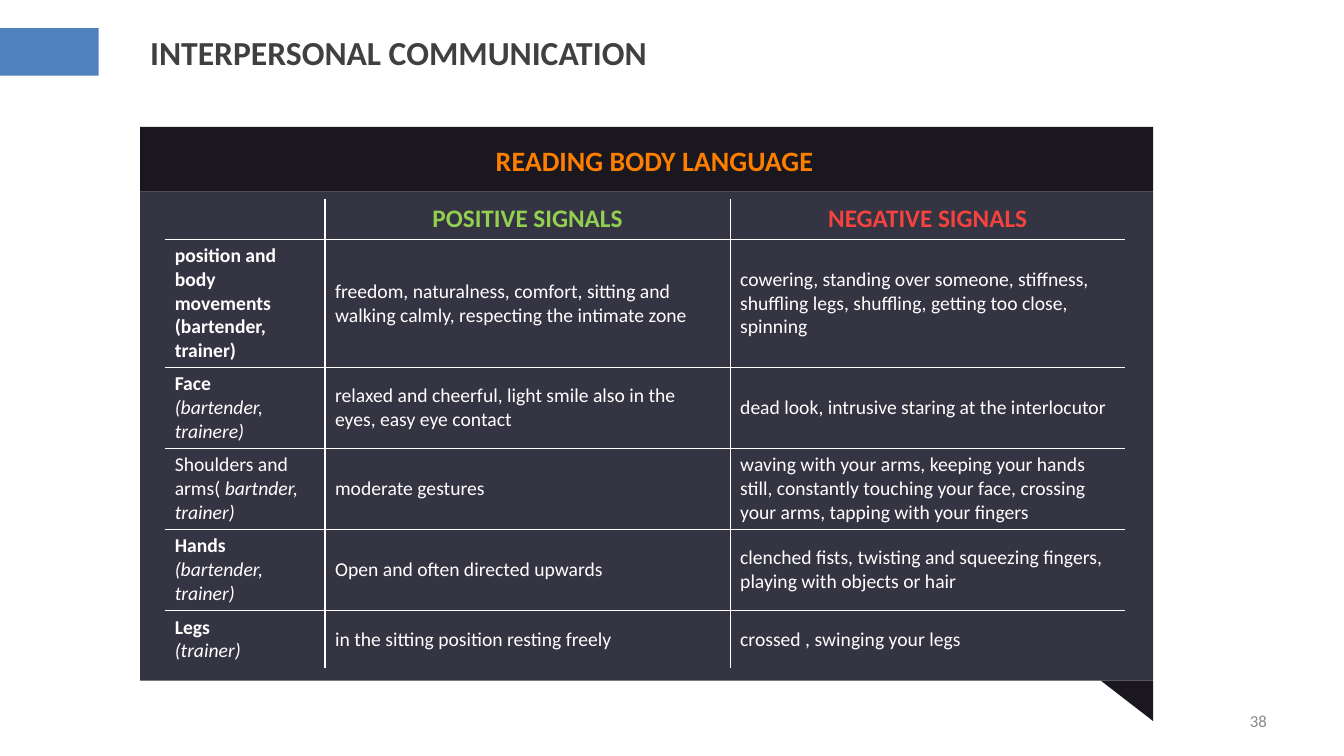
import pptx
import pptx.util
import pptx.dml.color
import pptx.enum.shapes
import pptx.enum.text
import pptx.oxml
import pptx.oxml.ns

Cm = pptx.util.Cm
Pt = pptx.util.Pt
RGBColor = pptx.dml.color.RGBColor
SHAPE = pptx.enum.shapes.MSO_SHAPE
ALIGN = pptx.enum.text.PP_ALIGN
MIDDLE = pptx.enum.text.MSO_ANCHOR.MIDDLE

BLUE = RGBColor(0x4F, 0x81, 0xBD)
SLATE = RGBColor(0x35, 0x34, 0x43)
NIGHT = RGBColor(0x1A, 0x17, 0x1F)
ORANGE = RGBColor(0xFD, 0x7E, 0x01)
GREEN = RGBColor(0x92, 0xD0, 0x50)
RED = RGBColor(0xF4, 0x43, 0x3E)
WHITE = RGBColor(0xFF, 0xFF, 0xFF)
DARK_GREY = RGBColor(0x40, 0x40, 0x40)
GREY = RGBColor(0x89, 0x89, 0x89)

COLUMN_WIDTHS = (4.04, 10.21, 9.96)
ROW_HEIGHTS = (1.02, 3.23, 2.04, 2.04, 2.04, 1.46)

# Each label is a list of paragraphs, each paragraph a list of (text, style).
SIGNALS = [
    ([[("position and body movements", "bold")], [("(bartender, trainer)", "bold")]],
     "freedom, naturalness, comfort, sitting and walking calmly, "
     "respecting the intimate zone",
     "cowering, standing over someone, stiffness, shuffling legs, shuffling, "
     "getting too close, spinning"),
    ([[("Face", "bold")], [("(bartender, trainere)", "italic")]],
     "relaxed and cheerful, light smile also in the eyes, easy eye contact",
     "dead look, intrusive staring at the interlocutor"),
    ([[("Shoulders and arms( ", "plain"), ("bartnder, trainer)", "italic")]],
     "moderate gestures",
     "waving with your arms, keeping your hands still, constantly touching "
     "your face, crossing your arms, tapping with your fingers"),
    ([[("Hands", "bold")], [("(bartender, trainer)", "italic")]],
     "Open and often directed upwards",
     "clenched fists, twisting and squeezing fingers, playing with objects or hair"),
    ([[("Legs", "bold")], [("(trainer)", "italic")]],
     "in the sitting position resting freely",
     "crossed , swinging your legs"),
]


def set_values(target, values):
    for name, value in values.items():
        setattr(target, name, value)


def write(frame, paragraphs, size, color, align=ALIGN.LEFT):
    """Fill a text frame with paragraphs of (text, style) spans."""
    set_values(frame, {"word_wrap": True, "vertical_anchor": MIDDLE})
    for index, spans in enumerate(paragraphs):
        para = frame.add_paragraph() if index else frame.paragraphs[0]
        para.alignment = align
        for text, style in spans:
            span = para.add_run()
            span.text = text
            set_values(span.font, {"name": "Calibri", "size": Pt(size),
                                   "bold": style == "bold",
                                   "italic": style == "italic"})
            span.font.color.rgb = color


def add_block(shapes, kind, place, color, rotation=0):
    block = shapes.add_shape(kind, *map(Cm, place))
    block.shadow.inherit = False
    block.fill.solid()
    block.fill.fore_color.rgb = color
    block.line.fill.background()
    block.rotation = rotation


def add_label(page, place, text, style, size, color, align):
    box = page.shapes.add_textbox(*map(Cm, place))
    write(box.text_frame, [[(text, style)]], size, color, align)


def add_title(page, text):
    title = page.shapes.title
    set_values(title, {"left": Cm(3.53), "top": Cm(0.53),
                       "width": Cm(26.8), "height": Cm(1.57)})
    title.text_frame.auto_size = pptx.enum.text.MSO_AUTO_SIZE.NONE
    write(title.text_frame, [[(text, "bold")]], 24, DARK_GREY)


def add_panel(page):
    panel = page.shapes.add_group_shape().shapes
    add_block(panel, SHAPE.RECTANGLE, (3.53, 4.83, 25.53, 12.32), SLATE)
    add_block(panel, SHAPE.RECTANGLE, (3.53, 3.2, 25.53, 1.63), NIGHT)
    add_block(panel, SHAPE.RIGHT_TRIANGLE, (27.74, 17.15, 1.32, 1.02), NIGHT, 180)


def set_borders(cell, inner_sides):
    """Draw white lines on the inner sides and none on the outer ones."""
    properties = cell._tc.get_or_add_tcPr()
    for index, (side, inner) in enumerate(inner_sides.items()):
        paint = (f'<a:solidFill><a:srgbClr val="{WHITE}"/></a:solidFill>'
                 if inner else "<a:noFill/>")
        properties.insert(index, pptx.oxml.parse_xml(
            f'<a:ln{side} {pptx.oxml.ns.nsdecls("a")} w="{Pt(1)}">{paint}</a:ln{side}>'))


def format_cell(cell, row, column):
    set_values(cell, {"margin_top": Cm(0.1), "margin_bottom": Cm(0.1),
                      "vertical_anchor": MIDDLE})
    cell.fill.background()
    set_borders(cell, {"L": column > 0, "R": column < len(COLUMN_WIDTHS) - 1,
                       "T": row > 0, "B": row < len(ROW_HEIGHTS) - 1})


def add_signal_table(page):
    frame = page.shapes.add_table(
        len(ROW_HEIGHTS), len(COLUMN_WIDTHS), Cm(4.15), Cm(5.01),
        Cm(sum(COLUMN_WIDTHS)), Cm(sum(ROW_HEIGHTS)))
    table = frame.table
    set_values(table, {"first_row": False, "horz_banding": False})
    for column, width in zip(table.columns, COLUMN_WIDTHS):
        column.width = Cm(width)
    for row, height in zip(table.rows, ROW_HEIGHTS):
        row.height = Cm(height)
    for row in range(len(ROW_HEIGHTS)):
        for column in range(len(COLUMN_WIDTHS)):
            format_cell(table.cell(row, column), row, column)

    headings = (("POSITIVE SIGNALS", GREEN), ("NEGATIVE SIGNALS", RED))
    for column, (text, color) in enumerate(headings, 1):
        write(table.cell(0, column).text_frame, [[(text, "bold")]], 18, color,
              ALIGN.CENTER)
    for row, (label, positive, negative) in enumerate(SIGNALS, 1):
        contents = (label, [[(positive, "plain")]], [[(negative, "plain")]])
        for column, paragraphs in enumerate(contents):
            write(table.cell(row, column).text_frame, paragraphs, 14, WHITE)


def main():
    deck = pptx.Presentation()
    set_values(deck, {"slide_width": Cm(33.87), "slide_height": Cm(19.05)})
    page = deck.slides.add_slide(deck.slide_layouts[5])
    add_block(page.shapes, SHAPE.RECTANGLE, (0, 0.71, 2.49, 1.2), BLUE)
    add_title(page, "INTERPERSONAL COMMUNICATION")
    add_label(page, (24.28, 17.65, 7.9, 1.02), "38", "plain", 12, GREY, ALIGN.RIGHT)
    add_panel(page)
    add_label(page, (4.8, 3.48, 23.39, 1.12), "READING BODY LANGUAGE", "bold", 20,
              ORANGE, ALIGN.CENTER)
    add_signal_table(page)
    deck.save("out.pptx")


if __name__ == "__main__":
    main()
